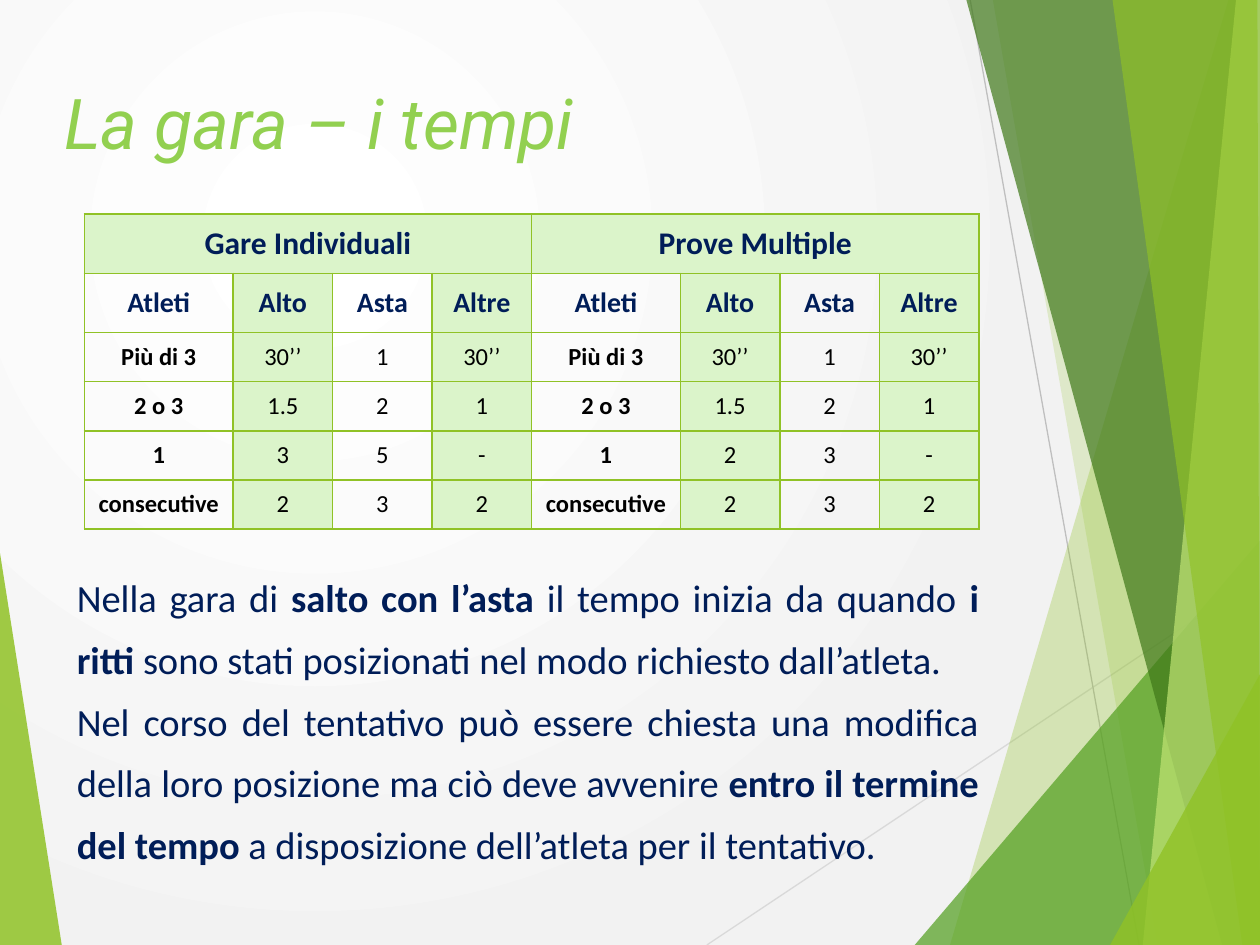
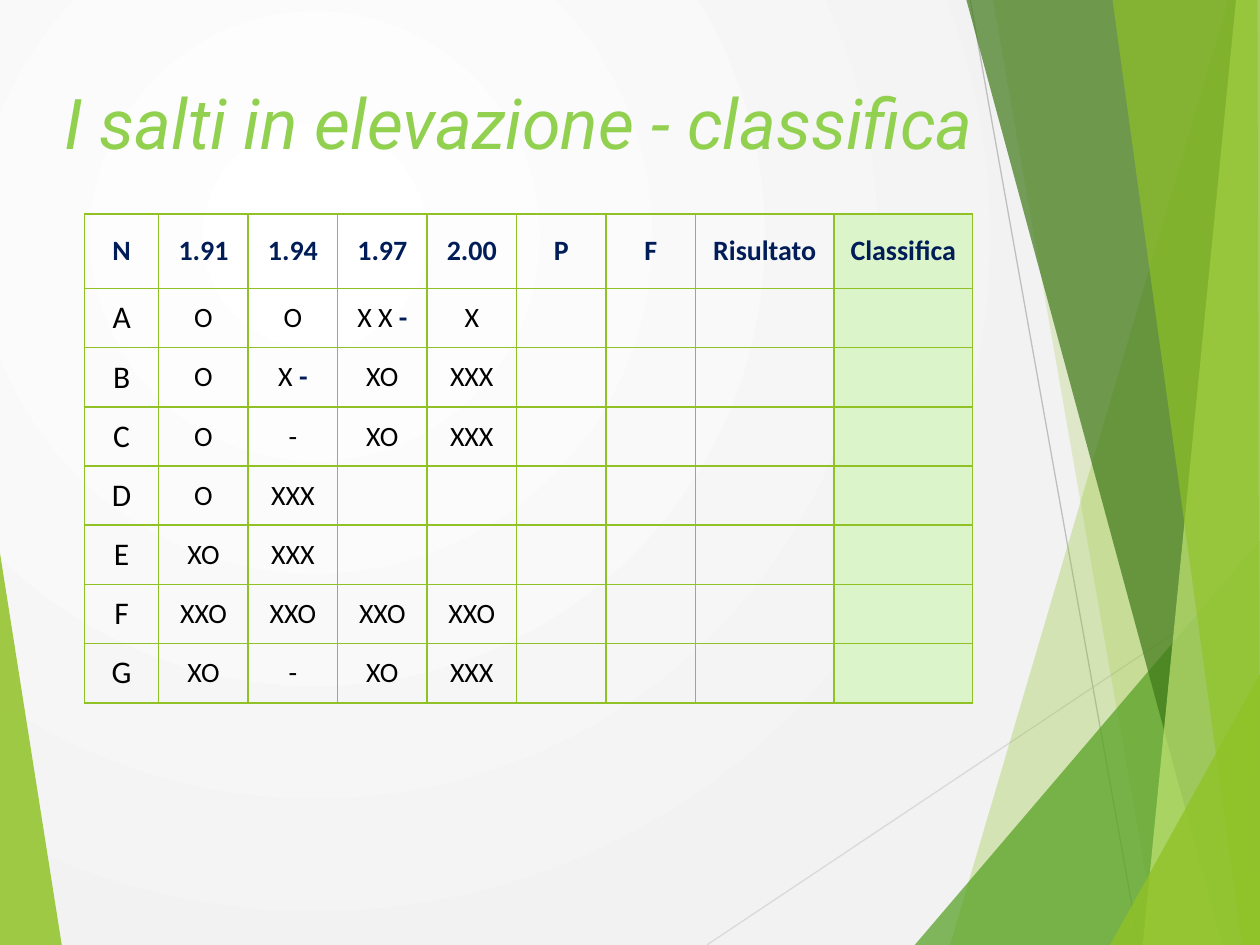
from lxml.etree import SubElement
from pptx import Presentation
from pptx.dml.color import RGBColor
from pptx.enum.shapes import MSO_CONNECTOR
from pptx.enum.text import MSO_ANCHOR, MSO_AUTO_SIZE, PP_ALIGN
from pptx.oxml import parse_xml
from pptx.oxml.ns import nsdecls, qn
from pptx.util import Inches, Pt

# Shared colours and fonts
WHITE = RGBColor(0xFF, 0xFF, 0xFF)
PALE_GREY = RGBColor(0xF2, 0xF2, 0xF2)
LIGHT_GREY = RGBColor(0xD9, 0xD9, 0xD9)
MID_GREY = RGBColor(0xBF, 0xBF, 0xBF)
BLACK = RGBColor(0, 0, 0)
NAVY = RGBColor(0x00, 0x1D, 0x58)
TITLE_GREEN = RGBColor(0x92, 0xD0, 0x50)
LIME = RGBColor(0x90, 0xC2, 0x26)
LEAF = RGBColor(0x54, 0xA0, 0x21)
FOREST = RGBColor(0x3F, 0x78, 0x19)
PALE_LIME = RGBColor(0xC0, 0xE4, 0x74)
TINT = RGBColor(0xDB, 0xF4, 0xCA)
TITLE_FONT, TEXT_FONT = "Roboto", "Calibri"

# Decoration: rays as (start, end, colour), facets as (corners, colour, opacity %)
RAYS = [
    ((5.61, 7.5), (10, 4.57), LIGHT_GREY),
    ((7.7, 0), (9.04, 7.5), MID_GREY),
]
LEFT_FACET = ([(0, 4.39), (0.49, 7.5), (0, 7.5)], LIME, 85)
RIGHT_FACETS = [
    ([(9.75, 0), (7.54, 7.5), (10, 7.5), (10, 0)], LIME, 30),
    ([(7.88, 0), (9.19, 7.5), (10, 7.5), (10, 0)], LIME, 20),
    ([(7.26, 7.5), (10, 4.29), (10, 7.5)], LEAF, 72),
    ([(7.67, 0), (9.7, 7.5), (10, 7.5), (10, 0)], FOREST, 70),
    ([(9.81, 0), (9.07, 7.5), (10, 7.5), (10, 0)], PALE_LIME, 70),
    ([(8.83, 0), (9.86, 7.5), (10, 7.5), (9.98, 0)], LIME, 65),
    ([(8.81, 7.5), (10, 5.35), (10, 7.5)], LIME, 80),
]


def set_background(master):
    fill = master.background.fill
    fill.gradient()
    for stop, color in zip(fill.gradient_stops, (WHITE, PALE_GREY)):
        stop.color.rgb = color
    gradient = master.element.find(".//" + qn("a:gradFill"))
    gradient.replace(gradient.find(qn("a:lin")), parse_xml(
        f'<a:path {nsdecls("a")} path="circle">'
        '<a:fillToRect l="50000" t="50000" r="100000" b="100000"/></a:path>'))


def add_facet(slide, corners, color, opacity):
    points = [(Inches(x), Inches(y)) for x, y in corners]
    builder = slide.shapes.build_freeform(*points[0])
    builder.add_line_segments(points[1:], close=True)
    facet = builder.convert_to_shape()
    facet.shadow.inherit = False
    facet.fill.solid()
    facet.fill.fore_color.rgb = color
    tone = facet.element.spPr.find(".//" + qn("a:srgbClr"))
    SubElement(tone, qn("a:alpha")).set("val", str(opacity * 1000))
    facet.line.fill.background()
    return facet


def add_ray(slide, start, end, color):
    ray = slide.shapes.add_connector(
        MSO_CONNECTOR.STRAIGHT, *(Inches(v) for v in start + end))
    ray.line.color.rgb = color
    ray.line.width = Pt(0.75)
    SubElement(ray.element.spPr, qn("a:effectLst"))
    return ray


def decorate_master(master, slide):
    """Draw the decoration on a slide, then move it behind the master's text."""
    parts = [add_facet(slide, *LEFT_FACET)]
    parts += [add_ray(slide, *ray) for ray in RAYS]
    parts += [add_facet(slide, *facet) for facet in RIGHT_FACETS]
    tree = master.element.cSld.spTree
    for index, part in enumerate(parts):
        part.element.find(".//" + qn("p:cNvPr")).set("id", str(100 + index))
        tree.insert(2 + index, part.element)


def place(shape, left, top, width, height):
    shape.left, shape.top = Inches(left), Inches(top)
    shape.width, shape.height = Inches(width), Inches(height)


def set_title(slide, text):
    title = slide.shapes.title
    place(title, 0, 0.25, 7.87, 0.98)
    frame = title.text_frame
    frame.text = text
    frame.auto_size = MSO_AUTO_SIZE.NONE
    frame.word_wrap = True
    frame.vertical_anchor = MSO_ANCHOR.TOP
    frame.margin_left = Inches(0.51)
    frame.margin_right = 0
    paragraph = frame.paragraphs[0]
    paragraph.alignment = PP_ALIGN.LEFT
    paragraph.line_spacing = 1.5
    font = paragraph.runs[0].font
    font.name, font.size, font.italic = TITLE_FONT, Pt(40), True
    font.color.rgb = TITLE_GREEN


def write(paragraph, marked_text, size, color, bold_color):
    """Write text in which *asterisks* enclose the bold parts."""
    for index, part in enumerate(marked_text.split("*")):
        if part:
            run = paragraph.add_run()
            run.text = part
            font = run.font
            font.name, font.size, font.bold = TEXT_FONT, Pt(size), index % 2 == 1
            font.color.rgb = bold_color if font.bold else color


def set_body(slide, texts):
    body = slide.placeholders[1]
    place(body, 0.51, 4.38, 7.36, 2.6)
    frame = body.text_frame
    frame.auto_size = MSO_AUTO_SIZE.NONE
    frame.word_wrap = True
    for index, text in enumerate(texts):
        paragraph = frame.add_paragraph() if index else frame.paragraphs[0]
        properties = paragraph._p.get_or_add_pPr()
        properties.set("marL", "0")
        properties.set("indent", "0")
        SubElement(properties, qn("a:buNone"))
        paragraph.alignment = PP_ALIGN.JUSTIFY
        paragraph.line_spacing = 1.34
        paragraph.space_before = Pt(0)
        write(paragraph, text, 22, NAVY, NAVY)


def add_borders(cell):
    properties = cell._tc.get_or_add_tcPr()
    for index, side in enumerate(("lnL", "lnR", "lnT", "lnB")):
        properties.insert(index, parse_xml(
            f'<a:{side} {nsdecls("a")} w="12700"><a:solidFill>'
            f'<a:srgbClr val="{LIME}"/></a:solidFill></a:{side}>'))


def add_grid(slide, widths, heights, rows, is_tinted, text_style):
    """text_style(row, column) gives the size and the colour of bold text."""
    table = slide.shapes.add_table(
        len(heights), len(widths), Inches(0.67), Inches(1.7),
        Inches(sum(widths)), Inches(sum(heights))).table
    table.first_row = table.horz_banding = False
    for column, width in zip(table.columns, widths):
        column.width = Inches(width)
    for row, height in zip(table.rows, heights):
        row.height = Inches(height)
    for r, texts in enumerate(rows):
        for c, text in enumerate(texts):
            cell = table.cell(r, c)
            cell.vertical_anchor = MSO_ANCHOR.MIDDLE
            if is_tinted(r, c):
                cell.fill.solid()
                cell.fill.fore_color.rgb = TINT
            else:
                cell.fill.background()
            add_borders(cell)
            paragraph = cell.text_frame.paragraphs[0]
            paragraph.alignment = PP_ALIGN.CENTER
            size, bold_color = text_style(r, c)
            write(paragraph, text, size, BLACK, bold_color)
    return table


def add_times_table(slide):
    headings = ["*Atleti*", "*Alto*", "*Asta*", "*Altre*"]
    # Athletes left, then times for single events and for combined events
    times = [
        ("Più di 3", ["30’’", "1", "30’’"], ["30’’", "1", "30’’"]),
        ("2 o 3", ["1.5", "2", "1"], ["1.5", "2", "1"]),
        ("1", ["3", "5", "-"], ["2", "3", "-"]),
        ("consecutive", ["2", "3", "2"], ["2", "3", "2"]),
    ]
    rows = [["*Gare Individuali*", "", "", "", "*Prove Multiple*", "", "", ""],
            headings * 2]
    for athletes, single, combined in times:
        label = f"*{athletes}*"
        rows.append([label, *single, label, *combined])
    sizes = [18, 16] + [14] * 4
    table = add_grid(
        slide, [1.18, 0.79, 0.79, 0.79] * 2, [0.47] * 2 + [0.39] * 4, rows,
        is_tinted=lambda r, c: r == 0 or c % 2 == 1,
        text_style=lambda r, c: (sizes[r], NAVY if r < 2 else BLACK))
    for first in (0, 4):
        table.cell(0, first).merge(table.cell(0, first + 3))


def add_ranking_table(slide):
    headings = ["N", "1.91", "1.94", "1.97", "2.00", "P", "F",
                "Risultato", "Classifica"]
    jumps = [
        ["A", "O", "O", "X X *-*", "X"],
        ["B", "O", "X *-*", "XO", "XXX"],
        ["C", "O", "-", "XO", "XXX"],
        ["D", "O", "XXX"],
        ["E", "XO", "XXX"],
        ["F", "XXO", "XXO", "XXO", "XXO"],
        ["G", "XO", "-", "XO", "XXX"],
    ]
    count = len(headings)
    rows = [[f"*{heading}*" for heading in headings]]
    rows += [jump + [""] * (count - len(jump)) for jump in jumps]
    add_grid(
        slide, [0.59] + [0.71] * 6 + [1.1] * 2, [0.59] + [0.47] * 7, rows,
        is_tinted=lambda r, c: c == count - 1,
        text_style=lambda r, c: (18 if r and c == 0 else 16, NAVY))


def main():
    prs = Presentation()
    prs.slide_width, prs.slide_height = Inches(10), Inches(7.5)

    # Times allowed
    times_slide = prs.slides.add_slide(prs.slide_layouts[1])
    set_background(prs.slide_master)
    decorate_master(prs.slide_master, times_slide)
    set_title(times_slide, "La gara – i tempi")
    set_body(times_slide, [
        "Nella gara di *salto con l’asta *il tempo inizia da quando *i ritti *"
        "sono stati posizionati nel modo richiesto dall’atleta.",
        "Nel corso del tentativo può essere chiesta una modifica della loro "
        "posizione ma ciò deve avvenire *entro il termine del tempo *"
        "a disposizione dell’atleta per il tentativo.",
    ])
    add_times_table(times_slide)

    # Ranking of the vertical jumps
    ranking_slide = prs.slides.add_slide(prs.slide_layouts[5])
    set_title(ranking_slide, "I salti in elevazione - classifica")
    add_ranking_table(ranking_slide)

    prs.save("out.pptx")


if __name__ == "__main__":
    main()
